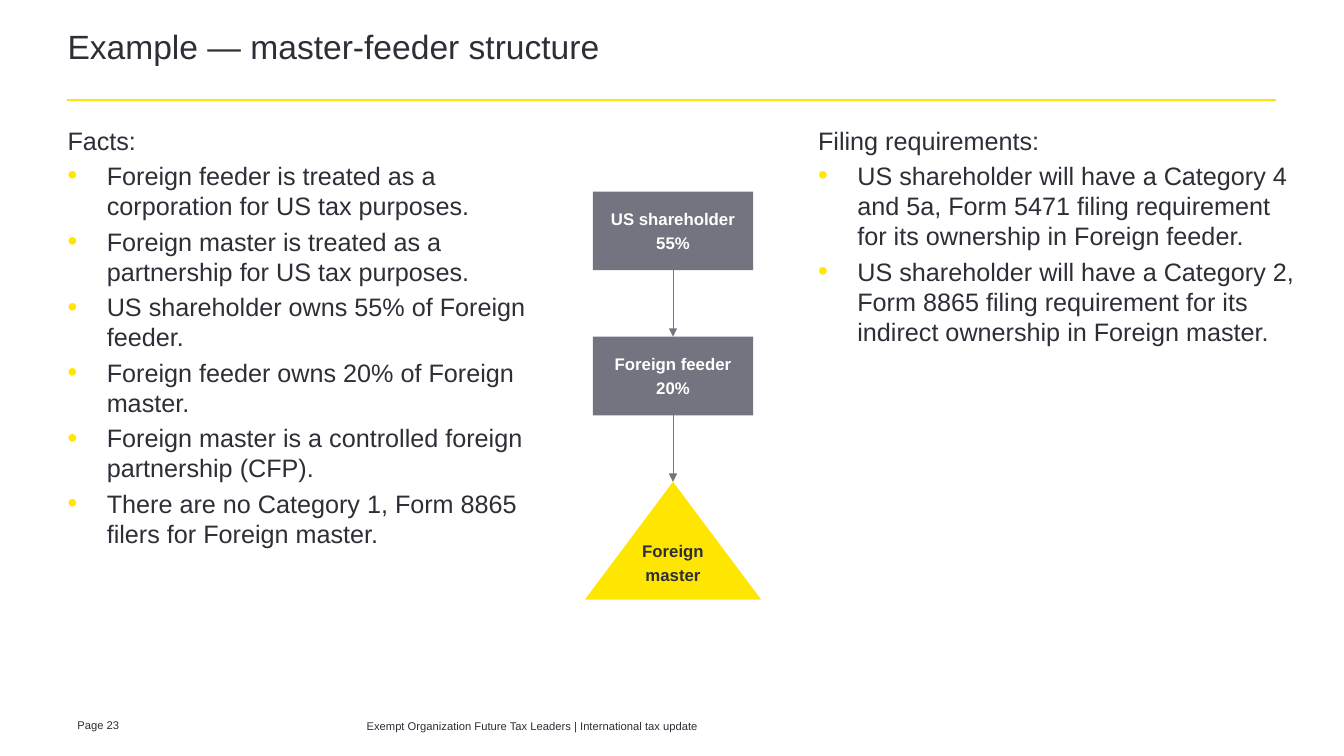
from dataclasses import dataclass

from pptx import Presentation
from pptx.dml.color import RGBColor
from pptx.enum.shapes import MSO_CONNECTOR, MSO_SHAPE
from pptx.enum.text import MSO_ANCHOR, MSO_AUTO_SIZE, PP_ALIGN
from pptx.oxml.ns import qn
from pptx.util import Inches, Pt
from lxml.etree import SubElement

YELLOW = RGBColor(0xFF, 0xE6, 0x00)
DARK = RGBColor(0x2E, 0x2E, 0x38)
GRAY = RGBColor(0x74, 0x74, 0x80)
WHITE = RGBColor(0xFF, 0xFF, 0xFF)
FONT = "Arial"
CHART_CENTER = 6.68
CHART_TOP = 1.9
CHART_STEP = 1.44


@dataclass(frozen=True)
class Column:
    idx: int
    left: float
    width: float
    height: float
    heading: str
    points: tuple[str, ...]


@dataclass(frozen=True)
class Entity:
    lines: tuple[str, ...]
    kind: MSO_SHAPE = MSO_SHAPE.RECTANGLE
    width: float = 1.59
    height: float = 0.78
    fill: RGBColor = GRAY
    color: RGBColor = WHITE
    insets: tuple[float, ...] = (0.04, 0.05, 0.04, 0.05)
    wrap: bool = True


@dataclass(frozen=True)
class Footer:
    box: tuple[float, ...]
    text: str


COLUMNS = (
    Column(1, 0.67, 4.65, 4.67, "Facts:", (
        "Foreign feeder is treated as a corporation for US tax purposes.",
        "Foreign master is treated as a partnership for US tax purposes.",
        "US shareholder owns 55% of Foreign feeder.",
        "Foreign feeder owns 20% of Foreign master.",
        "Foreign master is a controlled foreign partnership (CFP).",
        "There are no Category 1, Form 8865 filers for Foreign master.",
    )),
    Column(2, 8.12, 4.82, 2.24, "Filing requirements:", (
        "US shareholder will have a Category 4 and 5a, Form 5471 filing "
        "requirement for its ownership in Foreign feeder.",
        "US shareholder will have a Category 2, Form 8865 filing "
        "requirement for its indirect ownership in Foreign master.",
    )),
)
ENTITIES = (
    Entity(("US shareholder", "55%")),
    Entity(("Foreign feeder", "20%")),
    Entity(("Foreign", "master"), MSO_SHAPE.FLOWCHART_EXTRACT, 1.75, 1.17,
           YELLOW, DARK, (0.1, 0, 0.1, 0.15), False),
)
FOOTERS = (
    Footer((0.67, 7.08, 0.73, 0.2), "Page 23"),
    Footer((3.54, 7.09, 6.67, 0.24),
           "Exempt Organization Future Tax Leaders | International tax update"),
)


def set_frame(tf, insets=(0, 0, 0, 0), anchor=MSO_ANCHOR.TOP, wrap=True) -> None:
    tf.auto_size = MSO_AUTO_SIZE.NONE
    tf.word_wrap = wrap
    tf.vertical_anchor = anchor
    tf.margin_left, tf.margin_top, tf.margin_right, tf.margin_bottom = map(Inches, insets)


def add_bullet(p, shown: bool) -> None:
    pPr = p._p.get_or_add_pPr()
    indent = Inches(0.39) if shown else 0
    pPr.set("marL", str(indent))
    pPr.set("indent", str(-indent))
    if not shown:
        SubElement(pPr, qn("a:buNone"))
        return
    color = SubElement(pPr, qn("a:buClr"))
    SubElement(color, qn("a:srgbClr"), val=str(YELLOW))
    SubElement(pPr, qn("a:buSzPct"), val="110000")
    SubElement(pPr, qn("a:buFont"), typeface=FONT)
    SubElement(pPr, qn("a:buChar"), char="•")


def write(tf, text: str, *, size: float, color: RGBColor = DARK, bold: bool = False,
          align: PP_ALIGN = PP_ALIGN.LEFT, spacing: float = 1.0,
          bullet: bool | None = None) -> None:
    first = not tf.paragraphs[0].runs
    p = tf.paragraphs[0] if first else tf.add_paragraph()
    if bullet is not None:
        add_bullet(p, bullet)
    p.alignment = align
    p.line_spacing = spacing
    p.space_before = Pt(0 if first else size * 0.2)
    r = p.add_run()
    r.text = text
    r.font.name = FONT
    r.font.size = Pt(size)
    r.font.bold = bold
    r.font.color.rgb = color


def place(sp, left: float, top: float, width: float, height: float) -> None:
    sp.left, sp.top, sp.width, sp.height = map(Inches, (left, top, width, height))


def add_column(s, column: Column) -> None:
    sp = s.placeholders[column.idx]
    place(sp, column.left, 1.24, column.width, column.height)
    set_frame(sp.text_frame)
    write(sp.text_frame, column.heading, size=18, bullet=False)
    for point in column.points:
        write(sp.text_frame, point, size=18, bullet=True)


def add_entity(s, entity: Entity, top: float):
    left = CHART_CENTER - entity.width / 2
    sp = s.shapes.add_shape(entity.kind, *map(Inches, (left, top, entity.width, entity.height)))
    sp.shadow.inherit = False
    sp.fill.solid()
    sp.fill.fore_color.rgb = entity.fill
    sp.line.fill.background()
    set_frame(sp.text_frame, entity.insets, MSO_ANCHOR.MIDDLE, entity.wrap)
    for line in entity.lines:
        write(sp.text_frame, line, size=12, color=entity.color, bold=True,
              align=PP_ALIGN.CENTER)
    return sp


def add_line(s, ends: tuple[float, ...], color: RGBColor, width: float):
    line = s.shapes.add_connector(MSO_CONNECTOR.STRAIGHT, *map(Inches, ends))
    line.line.color.rgb = color
    line.line.width = Pt(width)
    SubElement(line._element.spPr, qn("a:effectLst"))
    return line


def add_arrow(s, owner, owned) -> None:
    arrow = add_line(s, (0, 0, 0, 0), GRAY, 0.5)
    arrow.begin_connect(owner, 2)
    arrow.end_connect(owned, 0)
    SubElement(arrow.line._get_or_add_ln(), qn("a:tailEnd"), type="triangle")


def add_footer(s, footer: Footer) -> None:
    sp = s.shapes.add_textbox(*map(Inches, footer.box))
    set_frame(sp.text_frame, (0.1, 0.05, 0.1, 0.05))
    write(sp.text_frame, footer.text, size=8)


def main() -> None:
    prs = Presentation()
    prs.slide_width, prs.slide_height = Inches(13.34), Inches(7.5)
    s = prs.slides.add_slide(prs.slide_layouts[3])

    title = s.shapes.title
    place(title, 0.67, 0.32, 12.01, 0.65)
    set_frame(title.text_frame)
    write(title.text_frame, "Example — master-feeder structure", size=24, spacing=0.85)
    add_line(s, (0.67, 0.99, 12.67, 0.99), YELLOW, 1.5)

    for column in COLUMNS:
        add_column(s, column)
    chain = [add_entity(s, entity, CHART_TOP + i * CHART_STEP)
             for i, entity in enumerate(ENTITIES)]
    for owner, owned in zip(chain, chain[1:]):
        add_arrow(s, owner, owned)
    for footer in FOOTERS:
        add_footer(s, footer)

    prs.save("out.pptx")


if __name__ == "__main__":
    main()
